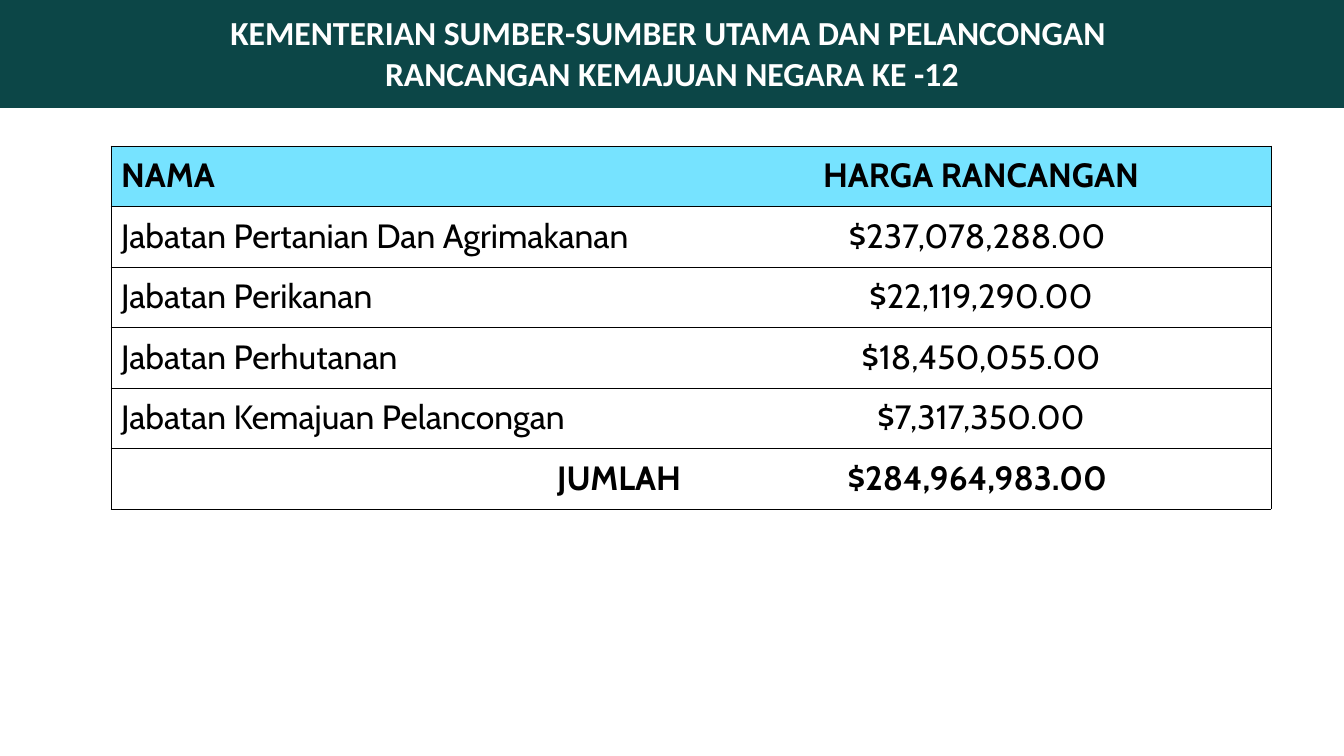
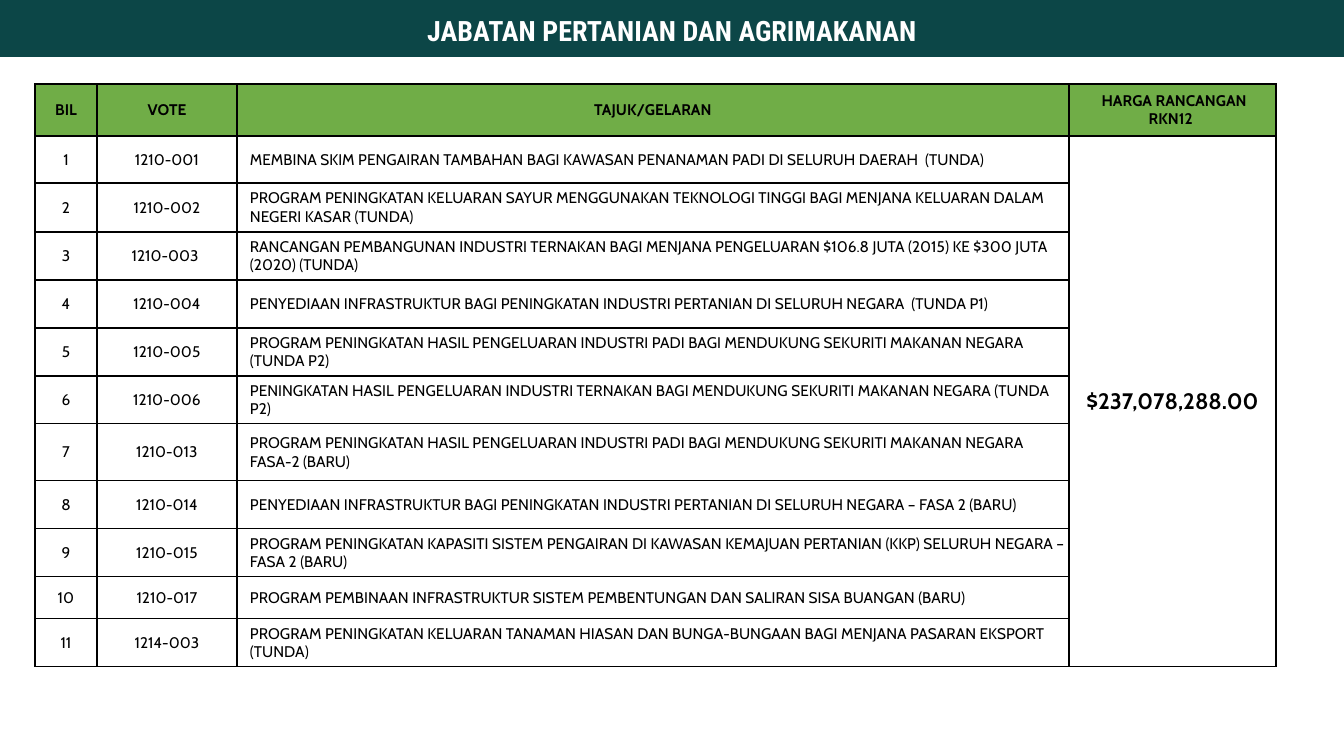
import pptx
import pptx.util
import pptx.dml.color
import pptx.enum.text
import pptx.oxml
import pptx.oxml.ns

PX = 9071  # EMU in one px, at 100.8 px to the inch
PAGE_WIDTH, PAGE_HEIGHT = 1344, 756

TEAL, CYAN, GREEN = "0C4647", "76E3FF", "70AD47"
BLACK, WHITE = "000000", "FFFFFF"
BODY_FONT = "Cabin"

color = pptx.dml.color.RGBColor.from_string
LEFT = pptx.enum.text.PP_ALIGN.LEFT
CENTER = pptx.enum.text.PP_ALIGN.CENTER
RIGHT = pptx.enum.text.PP_ALIGN.RIGHT
MIDDLE = pptx.enum.text.MSO_ANCHOR.MIDDLE

deck = pptx.Presentation()
deck.slide_width = PAGE_WIDTH * PX
deck.slide_height = PAGE_HEIGHT * PX


def add_page(title, height, insets, font, size):
    """Add a slide whose title is a full-width band."""
    page = deck.slides.add_slide(deck.slide_layouts[5])
    band = page.shapes.title
    band.left, band.top = 0, 0
    band.width, band.height = PAGE_WIDTH * PX, height * PX
    band.fill.solid()
    band.fill.fore_color.rgb = color(TEAL)
    frame = band.text_frame
    frame.text = title
    frame.word_wrap = True
    frame.auto_size = pptx.enum.text.MSO_AUTO_SIZE.NONE
    frame.vertical_anchor = MIDDLE
    frame.margin_top, frame.margin_bottom = [inset * PX for inset in insets]
    for para in frame.paragraphs:
        para.alignment = CENTER
        para.font.name = font
        para.font.size = pptx.util.Pt(size)
        para.font.bold = True
        para.font.color.rgb = color(WHITE)
    return page


def add_grid(page, left, top, widths, heights, rows, aligns, size,
             header_fill, border, inner_verticals):
    """Add a ruled table with a filled, bold header row."""
    table = page.shapes.add_table(
        len(rows), len(widths), left * PX, top * PX,
        sum(widths) * PX, sum(heights) * PX).table
    table.first_row = table.horz_banding = False
    for column, width in zip(table.columns, widths):
        column.width = width * PX
    for row, height in zip(table.rows, heights):
        row.height = height * PX

    for r, texts in enumerate(rows):
        for c, text in enumerate(texts):
            cell = table.cell(r, c)
            cell.text = text
            cell.vertical_anchor = MIDDLE

            # Borders
            ruled = {"L": inner_verticals or c == 0,
                     "R": inner_verticals or c == len(widths) - 1,
                     "T": True, "B": True}
            properties = cell._tc.get_or_add_tcPr()
            for side, drawn in ruled.items():
                paint = (f'<a:solidFill><a:srgbClr val="{BLACK}"/></a:solidFill>'
                         if drawn else "<a:noFill/>")
                properties.append(pptx.oxml.parse_xml(
                    f'<a:ln{side} {pptx.oxml.ns.nsdecls("a")} '
                    f'w="{pptx.util.Pt(border)}">{paint}</a:ln{side}>'))

            # Fill and text
            if r == 0:
                cell.fill.solid()
                cell.fill.fore_color.rgb = color(header_fill)
            else:
                cell.fill.background()
            for para in cell.text_frame.paragraphs:
                para.alignment = aligns[c]
                para.font.name = BODY_FONT
                para.font.size = pptx.util.Pt(size)
                para.font.bold = r == 0
                para.font.color.rgb = color(BLACK)
    return table


# Slide 1: cost by department
summary_rows = [
    ("NAMA", "HARGA RANCANGAN"),
    ("Jabatan Pertanian Dan Agrimakanan", "$237,078,288.00 "),
    ("Jabatan Perikanan", "$22,119,290.00"),
    ("Jabatan Perhutanan", "$18,450,055.00"),
    ("Jabatan Kemajuan Pelancongan", "$7,317,350.00"),
    ("JUMLAH", "$284,964,983.00 "),
]
summary_page = add_page(
    "KEMENTERIAN SUMBER-SUMBER UTAMA DAN PELANCONGAN \n"
    "RANCANGAN KEMAJUAN NEGARA KE -12",
    height=108, insets=(5, 8), font="Calibri", size=24)
summary = add_grid(
    summary_page, 111, 146, [580, 580], [60, 61] * 3, summary_rows,
    [LEFT, CENTER], size=24, header_fill=CYAN, border=0.5,
    inner_verticals=False)

# Total row
for cell in summary.rows[5].cells:
    cell.text_frame.paragraphs[0].font.bold = True
summary.cell(5, 0).text_frame.paragraphs[0].alignment = RIGHT

# Slide 2: projects of the agriculture department
projects = [
    ("1210-001", "MEMBINA SKIM PENGAIRAN TAMBAHAN BAGI KAWASAN PENANAMAN PADI "
                 "DI SELURUH DAERAH  (TUNDA)"),
    ("1210-002", "PROGRAM PENINGKATAN KELUARAN SAYUR MENGGUNAKAN TEKNOLOGI TINGGI "
                 "BAGI MENJANA KELUARAN DALAM NEGERI KASAR (TUNDA)"),
    ("1210-003 ", "RANCANGAN PEMBANGUNAN INDUSTRI TERNAKAN BAGI MENJANA PENGELUARAN "
                  "$106.8 JUTA (2015) KE $300 JUTA (2020) (TUNDA)"),
    ("1210-004", "PENYEDIAAN INFRASTRUKTUR BAGI PENINGKATAN INDUSTRI PERTANIAN "
                 "DI SELURUH NEGARA  (TUNDA P1)"),
    ("1210-005", "PROGRAM PENINGKATAN HASIL PENGELUARAN INDUSTRI PADI BAGI "
                 "MENDUKUNG SEKURITI MAKANAN NEGARA (TUNDA P2)"),
    ("1210-006", "PENINGKATAN HASIL PENGELUARAN INDUSTRI TERNAKAN BAGI "
                 "MENDUKUNG SEKURITI MAKANAN NEGARA (TUNDA P2)"),
    ("1210-013", "PROGRAM PENINGKATAN HASIL PENGELUARAN INDUSTRI PADI BAGI "
                 "MENDUKUNG SEKURITI MAKANAN NEGARA FASA-2 (BARU)"),
    ("1210-014", "PENYEDIAAN INFRASTRUKTUR BAGI PENINGKATAN INDUSTRI PERTANIAN "
                 "DI SELURUH NEGARA – FASA 2 (BARU)"),
    ("1210-015", "PROGRAM PENINGKATAN KAPASITI SISTEM PENGAIRAN DI KAWASAN "
                 "KEMAJUAN PERTANIAN (KKP) SELURUH NEGARA – FASA 2 (BARU)"),
    ("1210-017", "PROGRAM PEMBINAAN INFRASTRUKTUR SISTEM PEMBENTUNGAN DAN "
                 "SALIRAN SISA BUANGAN (BARU)"),
    ("1214-003", "PROGRAM PENINGKATAN KELUARAN TANAMAN HIASAN DAN BUNGA-BUNGAAN "
                 "BAGI MENJANA PASARAN EKSPORT (TUNDA)"),
]
project_rows = [("BIL", "VOTE", "TAJUK/GELARAN", " HARGA RANCANGAN\nRKN12 ")]
for number, (vote, name) in enumerate(projects, start=1):
    price = " $237,078,288.00 " if number == 1 else ""
    project_rows.append((str(number), vote, name, price))

project_page = add_page("JABATAN PERTANIAN DAN AGRIMAKANAN", height=57,
                        insets=(8, 5), font="Roboto Condensed", size=20)
project_table = add_grid(
    project_page, 35, 84, [62, 140, 832, 207],
    [52, 47, 49, 48, 48, 48, 48, 57, 48, 48, 42, 48], project_rows,
    [CENTER, CENTER, LEFT, CENTER], size=11, header_fill=GREEN, border=1,
    inner_verticals=True)

# Tight cells, with project names indented
for cell in project_table.iter_cells():
    cell.margin_left = cell.margin_right = 0
    cell.margin_top = cell.margin_bottom = 0
for r in range(1, len(project_rows)):
    project_table.cell(r, 2).margin_left = 13 * PX
project_table.cell(0, 2).text_frame.paragraphs[0].alignment = CENTER

# One price for all projects
price_cell = project_table.cell(1, 3)
price_cell.merge(project_table.cell(len(projects), 3))
price_font = price_cell.text_frame.paragraphs[0].font
price_font.size = pptx.util.Pt(16)
price_font.bold = True

deck.save("out.pptx")
